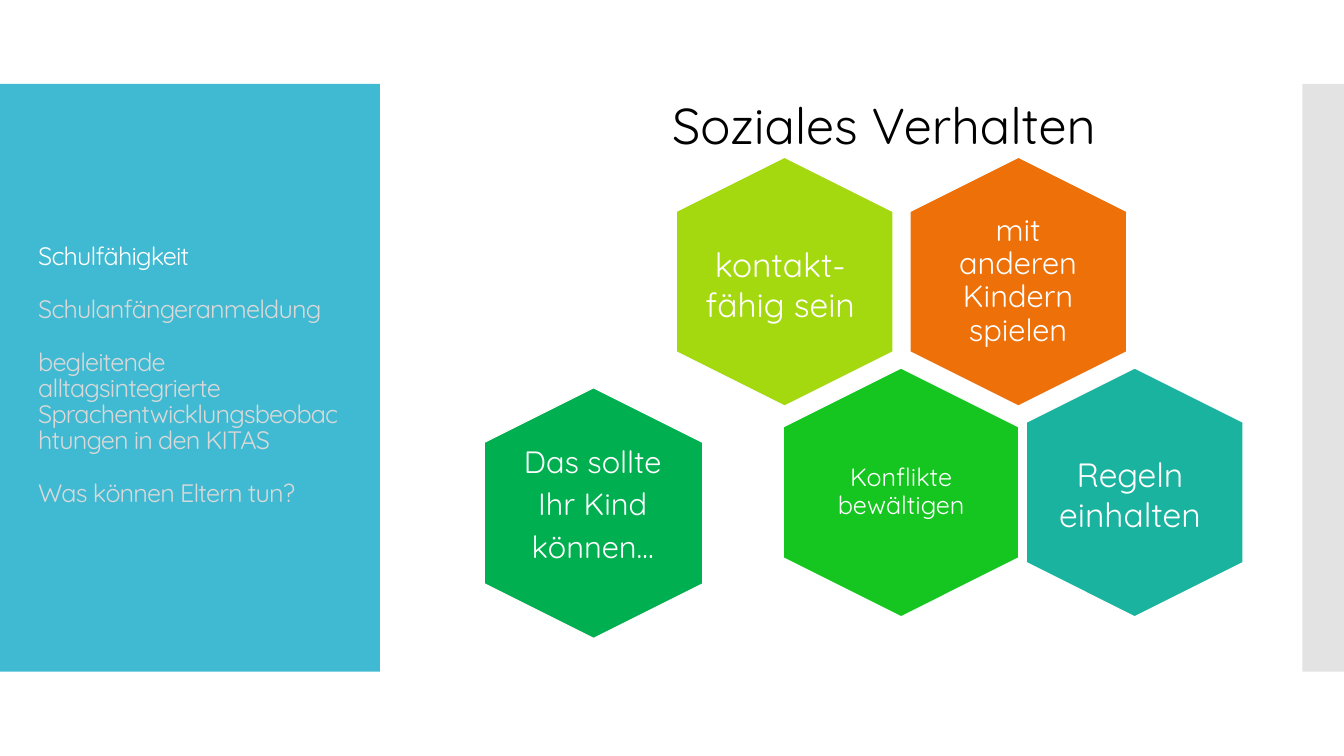
from lxml.etree import SubElement
from pptx import Presentation
from pptx.dml.color import RGBColor
from pptx.enum.shapes import MSO_SHAPE
from pptx.enum.text import MSO_ANCHOR, PP_ALIGN
from pptx.oxml.ns import qn
from pptx.util import Pt

COLORS = {
    "white": "FFFFFF", "black": "000000", "muted": "D9D9D9", "blue": "40BAD2",
    "gray": "C8C8C8", "orange": "EE7008", "lime": "A5D90F", "green": "15C620",
    "teal": "1AB39F", "emerald": "00B050",
}
FONT = "Quicksand"

TOPICS = [
    ("Schulfähigkeit", "white"),
    ("Schulanfängeranmeldung", "muted"),
    ("begleitende alltagsintegrierte Sprachentwicklungsbeobachtungen in den KITAS", "muted"),
    ("Was können Eltern tun?", "muted"),
]
TITLE = "Soziales Verhalten"
INTRO = ["Das sollte", "Ihr Kind", "können…"]

HEX_LENGTH = 177.7
HEXAGONS = [
    ("orange", 727.4, 201.2, 154.8),
    ("lime", 560.4, 201.2, 154.8),
    ("green", 643.6, 351.7, 168.3),
    ("teal", 810.5, 351.7, 154.8),
]
SKILLS = [
    ("mit anderen Kindern spielen", (673.9, 139.7, 106.6, 122.4),
     dict(size=22, line=0.9, anchor=MSO_ANCHOR.MIDDLE, inset=(6.5, 6.5, 6.5, 6.5))),
    ("Konflikte bewältigen", (586.8, 291.6, 113.8, 120.2),
     dict(size=18, line=0.9, anchor=MSO_ANCHOR.MIDDLE, inset=(5, 5, 5, 5))),
    ("kontakt-fähig sein", (483.1, 170.6, 148.3, 87.1), dict(size=24)),
    ("Regeln einhalten", (733, 320.4, 148.3, 87.1), dict(size=24)),
]
INTRO_HEX = (345.6, 276.7, 156.2, 179.3)


def color(name):
    return RGBColor.from_string(COLORS[name])


def paint(sp, fill, outline=None):
    sp.shadow.inherit = False
    sp.fill.solid()
    sp.fill.fore_color.rgb = color(fill)
    if outline:
        sp.line.color.rgb = color(outline)
        sp.line.width = Pt(0.85)
    else:
        sp.line.fill.background()
    return sp


def add_text(s, lines, box, size, line=1.0, align=PP_ALIGN.CENTER, gap=0,
             anchor=MSO_ANCHOR.TOP, inset=(7.2, 3.6, 7.2, 3.6), tracking=None):
    tf = s.shapes.add_textbox(*map(Pt, box)).text_frame
    tf.word_wrap = True
    tf.vertical_anchor = anchor
    tf.margin_left, tf.margin_top, tf.margin_right, tf.margin_bottom = map(Pt, inset)
    for i, (text, ink) in enumerate(lines):
        p = tf.add_paragraph() if i else tf.paragraphs[0]
        p.alignment = align
        p.line_spacing = line
        if i:
            p.space_before = Pt(gap)
        r = p.add_run()
        r.text = text
        r.font.name = FONT
        r.font.size = Pt(size)
        r.font.color.rgb = color(ink)
        if tracking is not None:
            r.font._element.set("spc", str(round(tracking * 100)))


def add_panels(s):
    for fill, left, width in [("blue", 0, 271.3), ("gray", 930.3, 29.7)]:
        sp = s.shapes.add_shape(MSO_SHAPE.RECTANGLE, Pt(left), Pt(60), Pt(width), Pt(419.7))
        paint(sp, fill)
    tint = sp.fill._xPr.find(qn("a:solidFill"))[0]
    SubElement(tint, qn("a:alpha")).set("val", "50000")


def add_hexagons(s):
    for fill, cx, cy, width in HEXAGONS:
        sp = s.shapes.add_shape(MSO_SHAPE.HEXAGON, Pt(cx - HEX_LENGTH / 2),
                                Pt(cy - width / 2), Pt(HEX_LENGTH), Pt(width))
        sp.rotation = 90
        sp.adjustments[0] = 0.25
        sp.adjustments[1] = 1.1547
        paint(sp, fill, "white")


def add_intro_hexagon(s):
    x, y, w, h = INTRO_HEX
    corner = w / 4
    fb = s.shapes.build_freeform(x + w / 2, y, scale=Pt(1))
    fb.add_line_segments([
        (x + w, y + corner), (x + w, y + h - corner), (x + w / 2, y + h),
        (x, y + h - corner), (x, y + corner),
    ], close=True)
    paint(fb.convert_to_shape(), "emerald", "white")


def main():
    prs = Presentation()
    prs.slide_width, prs.slide_height = Pt(960), Pt(540)
    s = prs.slides.add_slide(prs.slide_layouts[6])
    add_panels(s)
    add_text(s, TOPICS, (20.2, 129.6, 231.8, 321.1), 18, line=0.86, gap=19.4,
             align=PP_ALIGN.LEFT, anchor=MSO_ANCHOR.MIDDLE,
             inset=(7.2, 3.6, 7.2, 46), tracking=-0.6)
    add_text(s, [(TITLE, "black")], (332.6, 63.4, 597.6, 51.1), 36)
    add_hexagons(s)
    for text, box, style in SKILLS:
        add_text(s, [(text, "white")], box, **style)
    add_intro_hexagon(s)
    add_text(s, [(text, "white") for text in INTRO], (362.2, 315.4, 122.4, 97.9),
             22, line=0.9, gap=6.65)
    prs.save("out.pptx")


if __name__ == "__main__":
    main()
